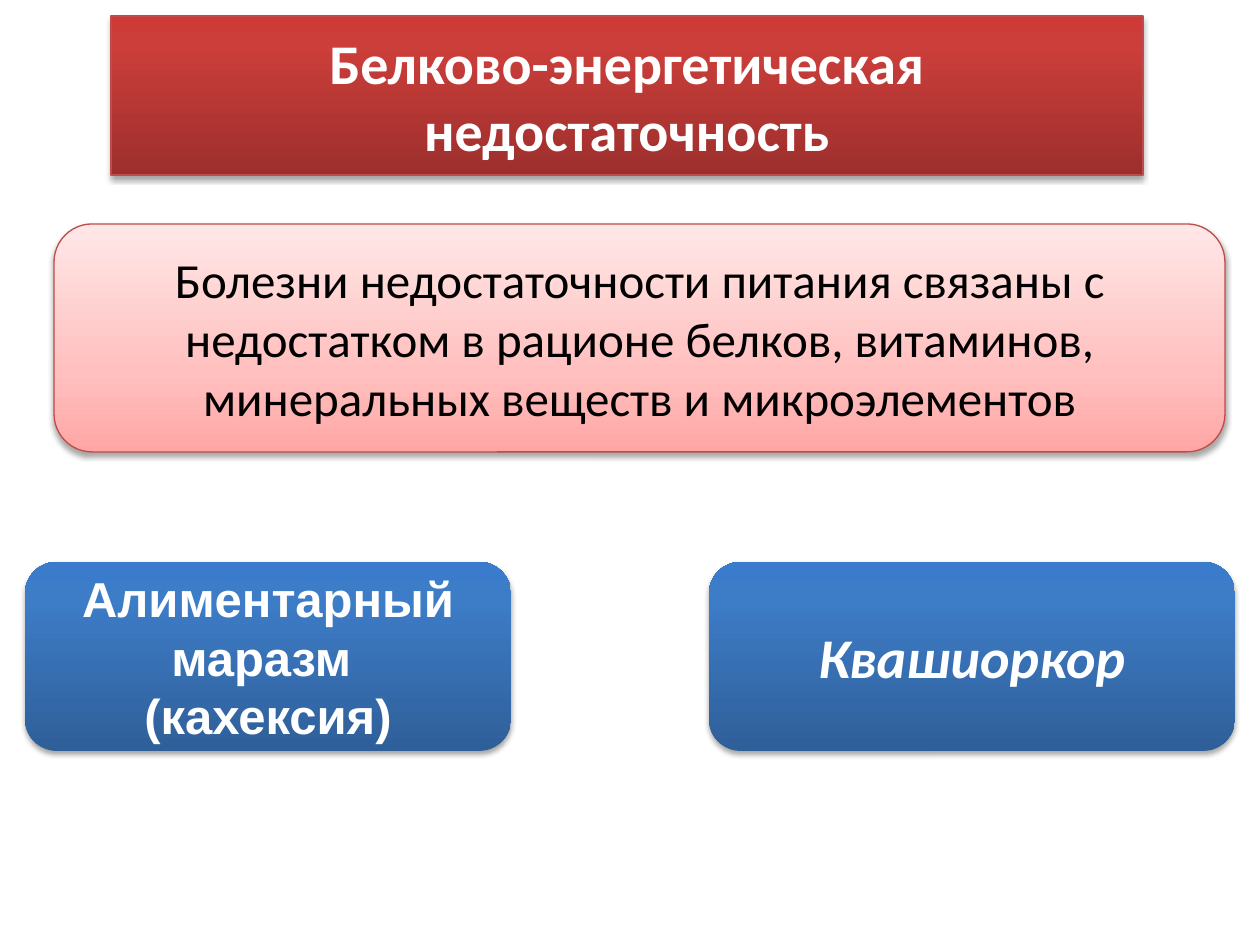
"""Build the slide on protein-energy malnutrition and its two forms."""
import lxml.etree
import pptx
import pptx.enum.shapes
import pptx.enum.text
import pptx.oxml
import pptx.oxml.ns
import pptx.util

PX = 914400 // 126
SLIDE = (1260, 945)
FORMS_TOP, FORMS_HEIGHT = 562, 189

THEME = {
    "red": {"stops": [(0, "9C2F2D"), (80, "CB3E3A"), (100, "CE3B37")], "line": "BF4C48", "text": "FFFFFF"},
    "pink": {"stops": [(0, "FFA6A5"), (35, "FFC0BF"), (100, "FFE7E7")], "line": "BF4C48", "text": "000000"},
    "blue": {"stops": [(0, "2F5F99"), (80, "3D7CC7"), (100, "3A7CCB")], "line": None, "text": "FFFFFF"},
    "large": 32,
    "medium": 28,
    "line_width": 0.75,
    "shadow": {"blur": 3.1, "dist": 1.8, "alpha": 35},
}

TITLE = {
    "paragraphs": ["Белково-энергетическая недостаточность"],
    "box": (111, 16, 1032, 159), "look": "red", "size": "large", "font": "Calibri", "bold": True,
}
CARDS = [
    {
        "paragraphs": ["Болезни недостаточности питания связаны с недостатком в рационе белков, "
                       "витаминов, минеральных веществ и микроэлементов"],
        "box": (54, 224, 1171, 228), "look": "pink", "size": "medium", "font": "Calibri",
    },
    {
        "paragraphs": ["Алиментарный маразм ", "(кахексия)"],
        "box": (25, FORMS_TOP, 486, FORMS_HEIGHT), "look": "blue", "size": "medium", "font": "Arial",
        "bold": True,
    },
    {
        "paragraphs": ["Квашиоркор"],
        "box": (709, FORMS_TOP, 526, FORMS_HEIGHT), "look": "blue", "size": "large", "font": "Calibri",
        "bold": True, "italic": True,
    },
]


def add_xml(parent, xml):
    ns = pptx.oxml.ns.nsdecls("a")
    parent.append(pptx.oxml.parse_xml(xml.replace(">", f" {ns}>", 1)))


def paint(s, look):
    stops = "".join(f'<a:gs pos="{pos * 1000}"><a:srgbClr val="{color}"/></a:gs>' for pos, color in look["stops"])
    add_xml(s._element.spPr, f'<a:gradFill rotWithShape="1"><a:gsLst>{stops}</a:gsLst>'
                             '<a:lin ang="16200000" scaled="0"/></a:gradFill>')
    if look["line"]:
        s.line.color.rgb = pptx.dml.color.RGBColor.from_string(look["line"])
        s.line.width = pptx.util.Pt(THEME["line_width"])
    else:
        s.line.fill.background()
    s.shadow.inherit = False
    shadow = THEME["shadow"]
    blur, dist = pptx.util.Pt(shadow["blur"]), pptx.util.Pt(shadow["dist"])
    add_xml(s._element.spPr.find(pptx.oxml.ns.qn("a:effectLst")),
            f'<a:outerShdw blurRad="{blur}" dist="{dist}" dir="5400000" rotWithShape="0">'
            f'<a:srgbClr val="000000"><a:alpha val="{shadow["alpha"] * 1000}"/></a:srgbClr></a:outerShdw>')


def write(s, card):
    tf = s.text_frame
    tf.text = "\n".join(card["paragraphs"])
    tf.word_wrap = True
    tf.auto_size = pptx.enum.text.MSO_AUTO_SIZE.NONE
    tf.vertical_anchor = pptx.enum.text.MSO_ANCHOR.MIDDLE
    for p in tf.paragraphs:
        p.alignment = pptx.enum.text.PP_ALIGN.CENTER
        p.font.name = card["font"]
        p.font.size = pptx.util.Pt(THEME[card["size"]])
        p.font.bold = card.get("bold", False)
        p.font.italic = card.get("italic", False)
        p.font.color.rgb = pptx.dml.color.RGBColor.from_string(THEME[card["look"]]["text"])


def main():
    prs = pptx.Presentation()
    prs.slide_width, prs.slide_height = (n * PX for n in SLIDE)
    slide = prs.slides.add_slide(prs.slide_layouts[5])

    title = slide.shapes.title
    title.left, title.top, title.width, title.height = (n * PX for n in TITLE["box"])
    add_xml(title._element.spPr, '<a:prstGeom prst="roundRect"><a:avLst/></a:prstGeom>')
    paint(title, THEME[TITLE["look"]])
    write(title, TITLE)

    for card in CARDS:
        s = slide.shapes.add_shape(pptx.enum.shapes.MSO_SHAPE.ROUNDED_RECTANGLE, *(n * PX for n in card["box"]))
        paint(s, THEME[card["look"]])
        write(s, card)

    prs.save("out.pptx")


if __name__ == "__main__":
    main()
